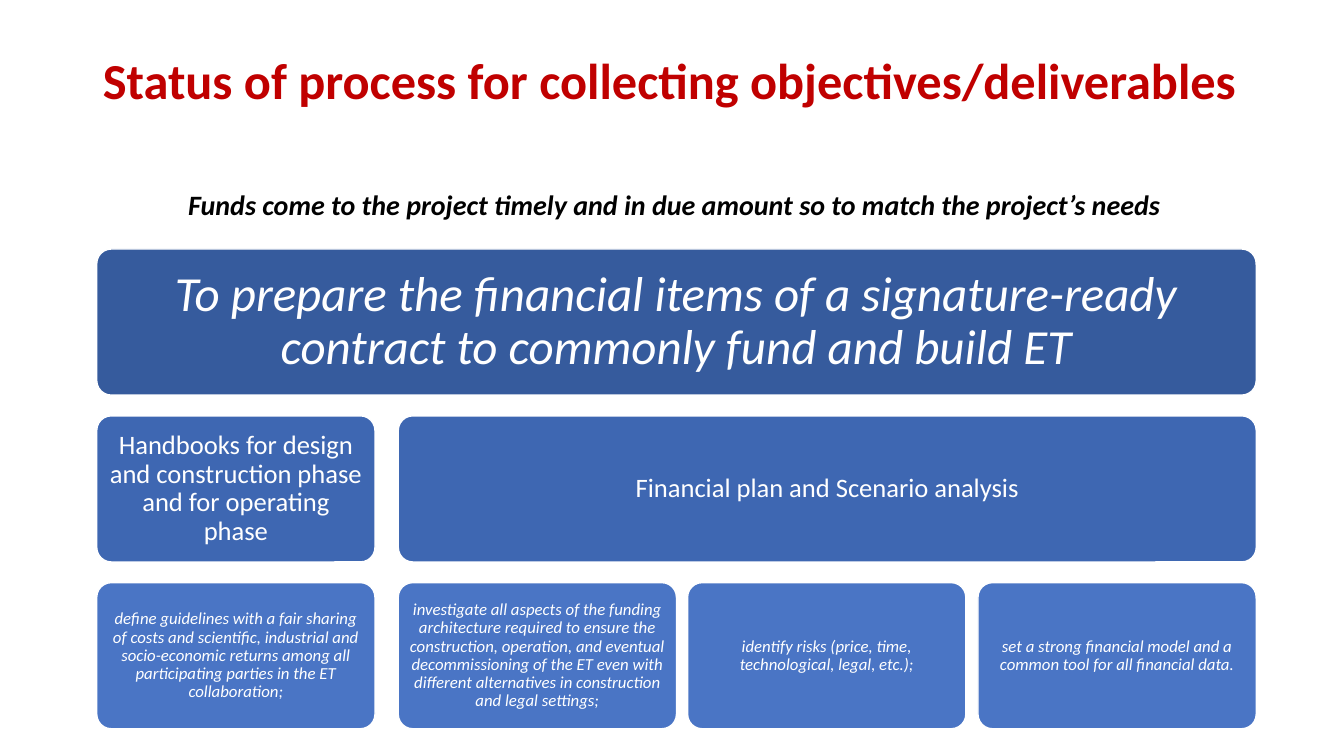
"""Build the slide on the status of collecting objectives and deliverables."""
from dataclasses import dataclass

from pptx import Presentation
from pptx.dml.color import RGBColor
from pptx.enum.shapes import MSO_SHAPE
from pptx.enum.text import MSO_ANCHOR, MSO_AUTO_SIZE, PP_ALIGN
from pptx.util import Inches, Pt

RED = RGBColor(0xC0, 0x00, 0x00)
BLACK = RGBColor(0x00, 0x00, 0x00)
WHITE = RGBColor(0xFF, 0xFF, 0xFF)
NAVY = RGBColor(0x36, 0x5B, 0x9D)
BLUE = RGBColor(0x3E, 0x67, 0xB2)
SKY = RGBColor(0x4A, 0x75, 0xC5)

FONT = "Calibri"
LEFTS = (0.96, 3.95, 6.82, 9.7)
WIDTH = 2.76
HEIGHT = 1.45
TOP = 2.47
STEP = 1.655


@dataclass(frozen=True)
class Tier:
    fill: RGBColor
    size: int
    inset: float
    italic: bool


@dataclass(frozen=True)
class Card:
    row: int
    first: int
    last: int
    text: str


TIERS = (
    Tier(NAVY, 35, 0.15, True),
    Tier(BLUE, 19, 0.08, False),
    Tier(SKY, 12, 0.05, True),
)

CARDS = (
    Card(0, 0, 3, "To prepare the financial items of a signature-ready contract "
                  "to commonly fund and build ET"),
    Card(1, 0, 0, "Handbooks for design and construction phase and for operating phase"),
    Card(1, 1, 3, "Financial plan and Scenario analysis"),
    Card(2, 0, 0, "define guidelines with a fair sharing of costs and scientific, "
                  "industrial and socio-economic returns among all participating "
                  "parties in the ET collaboration;"),
    Card(2, 1, 1, "investigate all aspects of the funding architecture required to "
                  "ensure the construction, operation, and eventual decommissioning "
                  "of the ET even with different alternatives in construction and "
                  "legal settings;"),
    Card(2, 2, 2, "identify risks (price, time, technological, legal, etc.);"),
    Card(2, 3, 3, "set a strong financial model and a common tool for all financial data."),
)


def write(shape, text: str, size: int, color: RGBColor, align: PP_ALIGN,
          bold: bool = False, italic: bool = False):
    frame = shape.text_frame
    frame.text = text
    frame.word_wrap = True
    frame.auto_size = MSO_AUTO_SIZE.NONE
    para = frame.paragraphs[0]
    para.alignment = align
    font = para.font
    font.name, font.size = FONT, Pt(size)
    font.bold, font.italic = bold, italic
    font.color.rgb = color
    return frame


def add_title(slide) -> None:
    title = slide.shapes.title
    title.left, title.top = Inches(0.92), Inches(0.4)
    title.width, title.height = Inches(11.5), Inches(1.45)
    frame = write(title, "Status of process for collecting objectives/deliverables\v",
                  36, RED, PP_ALIGN.LEFT, bold=True)
    frame.vertical_anchor = MSO_ANCHOR.MIDDLE
    frame.paragraphs[0].line_spacing = 0.9


def add_card(slide, card: Card) -> None:
    tier = TIERS[card.row]
    left = LEFTS[card.first]
    width = LEFTS[card.last] + WIDTH - left
    shape = slide.shapes.add_shape(
        MSO_SHAPE.ROUNDED_RECTANGLE, Inches(left), Inches(TOP + card.row * STEP),
        Inches(width), Inches(HEIGHT))
    shape.adjustments[0] = 0.1
    shape.shadow.inherit = False
    shape.fill.solid()
    shape.fill.fore_color.rgb = tier.fill
    shape.line.color.rgb = WHITE
    shape.line.width = Pt(1)
    frame = write(shape, card.text, tier.size, WHITE, PP_ALIGN.CENTER,
                  italic=tier.italic)
    frame.vertical_anchor = MSO_ANCHOR.MIDDLE
    frame.margin_left = frame.margin_right = Inches(tier.inset)
    frame.margin_top = frame.margin_bottom = Inches(tier.inset)
    frame.paragraphs[0].line_spacing = 0.9


def add_lead(slide) -> None:
    box = slide.shapes.add_textbox(Inches(0.96), Inches(1.81), Inches(11.46), Inches(0.77))
    write(box, "Funds come to the project timely and in due amount so to match "
               "the project’s needs", 20, BLACK, PP_ALIGN.CENTER, bold=True, italic=True)


def main() -> None:
    deck = Presentation()
    deck.slide_width, deck.slide_height = Inches(13.33), Inches(7.5)
    slide = deck.slides.add_slide(deck.slide_layouts[5])
    add_title(slide)
    for card in CARDS:
        add_card(slide, card)
    add_lead(slide)
    deck.save("out.pptx")


if __name__ == "__main__":
    main()
